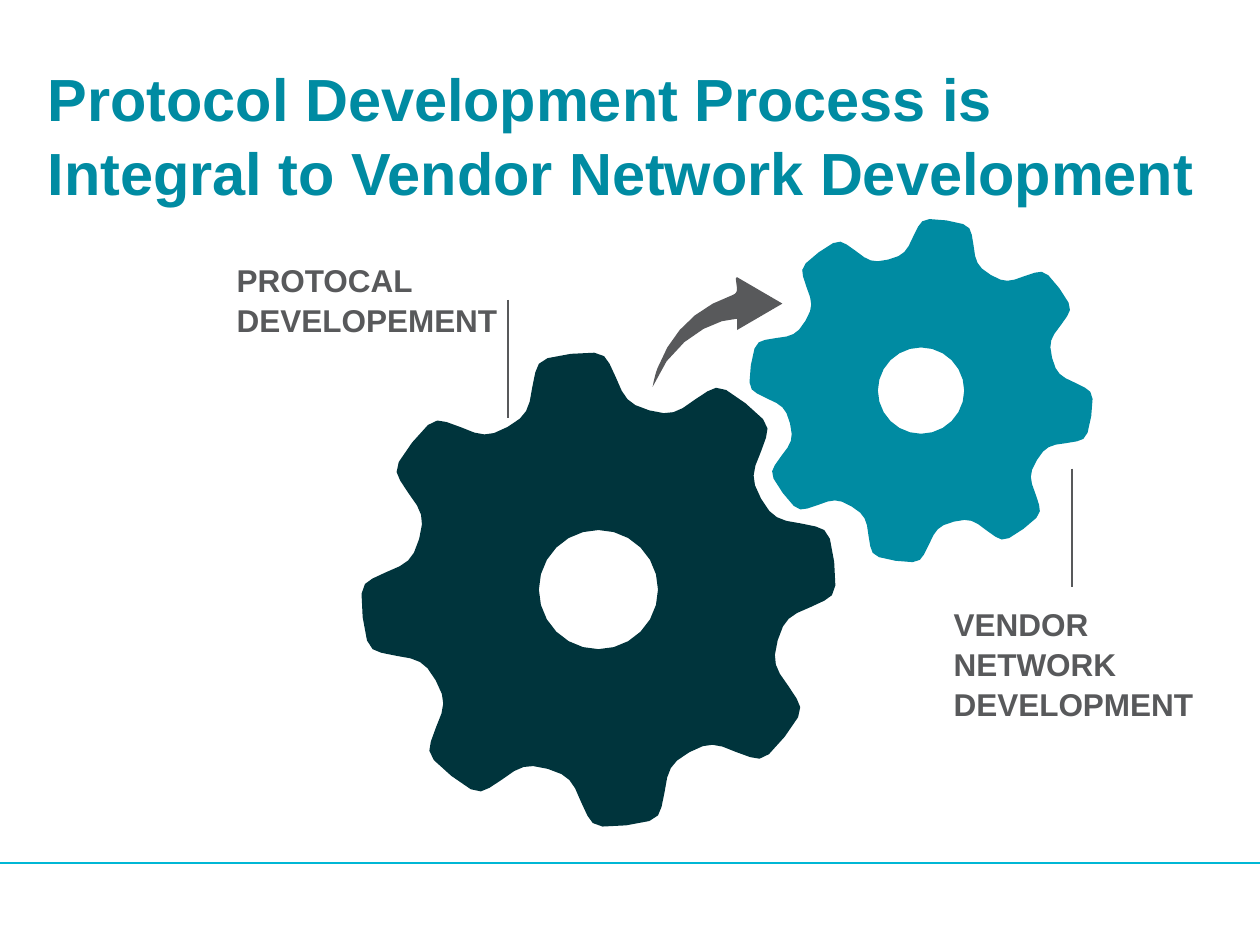
import math
from dataclasses import dataclass

from lxml import etree
from pptx import Presentation
from pptx import util as u
from pptx.dml.color import RGBColor
from pptx.enum import shapes, text
from pptx.oxml import ns


@dataclass(frozen=True)
class Theme:
    font: str = "Arial"
    teal: str = "008BA2"
    navy: str = "00343C"
    gray: str = "58595B"
    rule: str = "00B7D5"
    title_size: float = 34
    label_size: float = 18
    line_spacing: float = 1.05


THEME = Theme()
WIDTH, HEIGHT = 10, 7.5
TEETH = 8
HOLE_SHARE = 0.25
HOLE_STEP = 15
TOOTH_PROFILE = [
    (-18, 0.79), (-13.4, 0.84), (-9.5, 0.95), (-5.7, 0.995),
    (5.7, 0.995), (9.5, 0.95), (13.4, 0.84), (18, 0.79),
]
ARROW_START = (5.85, 2.53)
ARROW_CURVES = [
    [(5.68, 2.53), (5.33, 2.69), (5.18, 3.07)],
    [(5.19, 3.02), (5.2, 2.97), (5.22, 2.92)],
    [(5.33, 2.63), (5.53, 2.44), (5.82, 2.34)],
    [(5.84, 2.33), (5.85, 2.32), (5.85, 2.29)],
]
ARROW_HEAD = [(5.84, 2.21), (5.85, 2.2), (6.21, 2.41), (5.85, 2.62)]


def polar(center, radius, degrees):
    angle = math.radians(degrees)
    return center[0] + radius * math.cos(angle), center[1] + radius * math.sin(angle)


def bezier(start, first, second, end, steps):
    for step in range(1, steps + 1):
        t = step / steps
        weights = ((1 - t) ** 3, 3 * t * (1 - t) ** 2, 3 * t * t * (1 - t), t ** 3)
        yield tuple(
            sum(w * point[axis] for w, point in zip(weights, (start, first, second, end)))
            for axis in (0, 1)
        )


def smooth_loop(knots):
    count = len(knots)
    points = []
    for i in range(count):
        before, start, end, after = (knots[(i + k) % count] for k in (-1, 0, 1, 2))
        first = tuple(s + (e - b) / 6 for b, s, e in zip(before, start, end))
        second = tuple(e - (a - s) / 6 for s, e, a in zip(start, end, after))
        points.extend(bezier(start, first, second, end, steps=2))
    return points


def add_outline(page, contours, color):
    loops = [[(u.Inches(x), u.Inches(y)) for x, y in loop] for loop in contours]
    builder = page.shapes.build_freeform(*loops[0][0], scale=1.0)
    builder.add_line_segments(loops[0][1:], close=True)
    for loop in loops[1:]:
        builder.move_to(*loop[0])
        builder.add_line_segments(loop[1:], close=True)
    outline = builder.convert_to_shape()
    outline.shadow.inherit = False
    outline.fill.solid()
    outline.fill.fore_color.rgb = RGBColor.from_string(color)
    outline.line.fill.background()


def add_gear(page, center, radius, turn, color):
    knots = [
        polar(center, radius * share, turn + tooth * 360 / TEETH + offset)
        for tooth in range(TEETH)
        for offset, share in TOOTH_PROFILE
    ]
    hole = [
        polar(center, radius * HOLE_SHARE, -degrees)
        for degrees in range(0, 360, HOLE_STEP)
    ]
    add_outline(page, [smooth_loop(knots), hole], color)


def add_curved_arrow(page, color):
    points = [ARROW_START]
    for curve in ARROW_CURVES:
        points.extend(bezier(points[-1], *curve, steps=5))
    add_outline(page, [points + ARROW_HEAD], color)


def add_line(page, start, end, color, weight):
    line = page.shapes.add_connector(
        shapes.MSO_CONNECTOR.STRAIGHT, *(u.Inches(v) for v in (*start, *end))
    )
    line.line.color.rgb = RGBColor.from_string(color)
    line.line.width = u.Pt(weight)
    etree.SubElement(line._element.spPr, ns.qn("a:effectLst"))


def place(box, left, top, width, height):
    box.left, box.top = u.Inches(left), u.Inches(top)
    box.width, box.height = u.Inches(width), u.Inches(height)


def write(box, lines, *, size, color, anchor=text.MSO_ANCHOR.TOP, inset=None):
    frame = box.text_frame
    frame.word_wrap = True
    frame.auto_size = text.MSO_AUTO_SIZE.NONE
    frame.vertical_anchor = anchor
    if inset is not None:
        frame.margin_left = frame.margin_right = u.Inches(inset)
        frame.margin_top = frame.margin_bottom = u.Inches(inset)
    for index, line in enumerate(lines):
        para = frame.paragraphs[0] if index == 0 else frame.add_paragraph()
        para.alignment = text.PP_ALIGN.LEFT
        para.line_spacing = THEME.line_spacing
        span = para.add_run()
        span.text = line
        span.font.name = THEME.font
        span.font.size = u.Pt(size)
        span.font.bold = True
        span.font.color.rgb = RGBColor.from_string(color)


def add_label(page, lines, left, top, width, height):
    box = page.shapes.add_textbox(0, 0, 0, 0)
    place(box, left, top, width, height)
    write(box, lines, size=THEME.label_size, color=THEME.gray)


def main():
    deck = Presentation()
    deck.slide_width, deck.slide_height = u.Inches(WIDTH), u.Inches(HEIGHT)
    page = deck.slides.add_slide(deck.slide_layouts[5])

    add_line(page, (0, 6.85), (WIDTH, 6.85), THEME.rule, 0.75)
    title = page.shapes.title
    place(title, 0.38, 0.52, 9.25, 1.07)
    write(
        title,
        ["Protocol Development Process is Integral to Vendor Network Development"],
        size=THEME.title_size, color=THEME.teal, anchor=text.MSO_ANCHOR.MIDDLE, inset=0,
    )

    add_gear(page, (7.31, 3.1), 1.37, 8.5, THEME.teal)
    add_gear(page, (4.75, 4.68), 1.89, -6.7, THEME.navy)
    add_curved_arrow(page, THEME.gray)

    for x, top in ((8.51, 3.72), (4.03, 2.38)):
        add_line(page, (x, top), (x, top + 0.94), THEME.gray, 1)
    add_label(page, ["PROTOCAL", "DEVELOPEMENT"], 1.78, 2.01, 2.53, 1.31)
    add_label(page, ["VENDOR NETWORK DEVELOPMENT"], 7.47, 4.74, 2.17, 1.01)

    deck.save("out.pptx")


if __name__ == "__main__":
    main()
